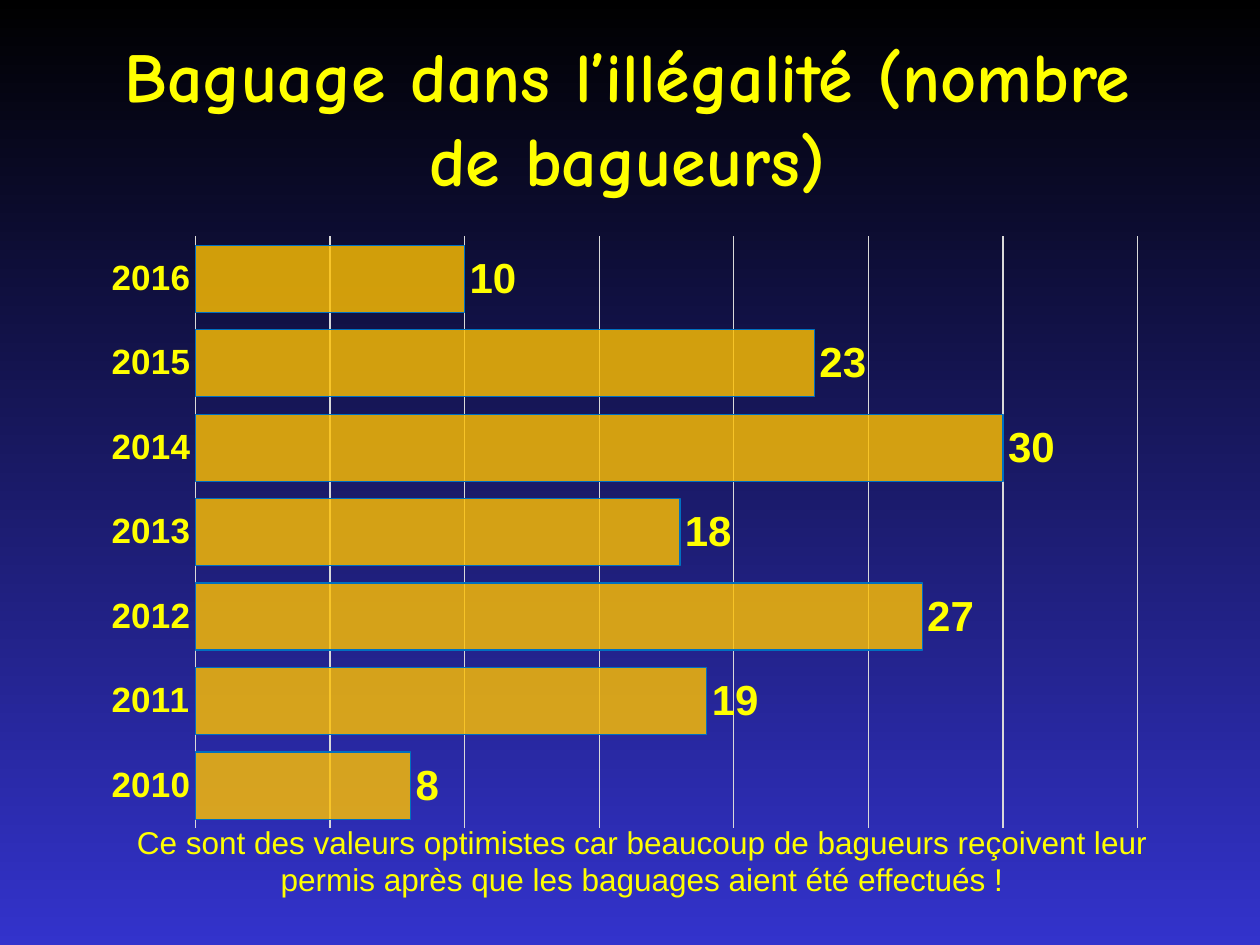
import pptx
import pptx.chart.data
import pptx.dml.color
import pptx.enum.chart
import pptx.enum.text
import pptx.oxml
import pptx.oxml.ns
import pptx.util
from pptx.util import Inches

BLACK = pptx.dml.color.RGBColor(0x00, 0x00, 0x00)
NAVY = pptx.dml.color.RGBColor(0x33, 0x33, 0xCC)
YELLOW = pptx.dml.color.RGBColor(0xFF, 0xFF, 0x00)
GOLD = pptx.dml.color.RGBColor(0xFF, 0xC0, 0x00)
BLUE = pptx.dml.color.RGBColor(0x00, 0x70, 0xC0)
GRAY = pptx.dml.color.RGBColor(0xD9, 0xD9, 0xD9)

YEARS = ["2010", "2011", "2012", "2013", "2014", "2015", "2016"]
RINGERS = [8, 19, 27, 18, 30, 23, 10]


def set_font(font, size, color=YELLOW, bold=False, name="Arial"):
    font.size = pptx.util.Pt(size)
    font.color.rgb = color
    font.bold = bold
    font.name = name


def set_line(line, color):
    line.color.rgb = color
    line.width = pptx.util.Pt(0.75)


def add_text(page, area, text, shadow=False, **style):
    box = page.shapes.add_textbox(*area)
    frame = box.text_frame
    frame.word_wrap = True
    para = frame.paragraphs[0]
    para.alignment = pptx.enum.text.PP_ALIGN.CENTER
    span = para.add_run()
    span.text = text
    set_font(span.font, **style)
    if shadow:
        effect = pptx.oxml.parse_xml(
            f'<a:effectLst {pptx.oxml.ns.nsdecls("a")}>'
            '<a:outerShdw blurRad="38100" dist="38100" dir="2700000">'
            '<a:srgbClr val="000000"/></a:outerShdw></a:effectLst>')
        span.font.fill.solid()
        span.font.color.rgb = style.get("color", YELLOW)
        fill = span.font._element.find(pptx.oxml.ns.qn("a:solidFill"))
        fill.addnext(effect)


def paint_background(page):
    fill = page.background.fill
    fill.gradient()
    fill.gradient_angle = 270
    for stop, color in zip(fill.gradient_stops, (BLACK, NAVY)):
        stop.color.rgb = color


def place_plot(chart, x, y, w, h):
    """Fix the inner plot area, in fractions of the chart."""
    plot_area = chart.element.chart.plotArea
    for old in plot_area.findall(pptx.oxml.ns.qn("c:layout")):
        plot_area.remove(old)
    sizes = "".join(f'<c:{key} val="{value}"/>'
                    for key, value in zip("xywh", (x, y, w, h)))
    plot_area.insert(0, pptx.oxml.parse_xml(
        f'<c:layout {pptx.oxml.ns.nsdecls("c")}><c:manualLayout>'
        '<c:layoutTarget val="inner"/><c:xMode val="edge"/>'
        f'<c:yMode val="edge"/>{sizes}</c:manualLayout></c:layout>'))


def add_ringer_chart(page, area):
    data = pptx.chart.data.CategoryChartData()
    data.categories = YEARS
    data.add_series("Series 1", RINGERS)
    chart = page.shapes.add_chart(
        pptx.enum.chart.XL_CHART_TYPE.BAR_CLUSTERED, *area, data).chart
    chart.has_legend = False
    chart.has_title = False
    set_font(chart.font, 10, BLACK)
    place_plot(chart, 0.1, 0.02, 0.88, 0.96)

    # Axes
    years = chart.category_axis
    years.major_tick_mark = pptx.enum.chart.XL_TICK_MARK.NONE
    set_font(years.tick_labels.font, 20, bold=True)
    set_line(years.format.line, GRAY)
    counts = chart.value_axis
    counts.visible = False
    counts.minimum_scale, counts.maximum_scale = 0, 35
    counts.major_unit = 5
    counts.has_major_gridlines = True
    set_line(counts.major_gridlines.format.line, GRAY)

    # Bars, slightly transparent
    plot = chart.plots[0]
    plot.gap_width = 26
    plot.vary_by_categories = False
    bars = plot.series[0]
    bars.format.fill.solid()
    bars.format.fill.fore_color.rgb = GOLD
    set_line(bars.format.line, BLUE)
    color = bars.format._element.spPr.find(
        f'{pptx.oxml.ns.qn("a:solidFill")}/{pptx.oxml.ns.qn("a:srgbClr")}')
    color.append(pptx.oxml.parse_xml(
        f'<a:alpha {pptx.oxml.ns.nsdecls("a")} val="81000"/>'))

    # Value labels
    labels = bars.data_labels
    labels.show_value = True
    labels.position = pptx.enum.chart.XL_LABEL_POSITION.OUTSIDE_END
    set_font(labels.font, 24, bold=True)


def build_slide(page):
    paint_background(page)
    add_text(page, (Inches(0.73), Inches(0.21), Inches(8.5), Inches(1.25)),
             "Baguage dans l’illégalité (nombre de bagueurs)",
             shadow=True, size=40, bold=True, name="Comic Neue")
    add_ringer_chart(
        page, (Inches(0.7), Inches(1.78), Inches(8.5), Inches(4.89)))
    add_text(page, (Inches(0.94), Inches(6.48), Inches(8.31), Inches(0.71)),
             "Ce sont des valeurs optimistes car beaucoup de bagueurs "
             "reçoivent leur permis après que les baguages aient été "
             "effectués !", size=18)


def main():
    deck = pptx.Presentation()
    deck.slide_width = Inches(10)
    deck.slide_height = Inches(7.5)
    build_slide(deck.slides.add_slide(deck.slide_layouts[6]))
    deck.save("out.pptx")


if __name__ == "__main__":
    main()
